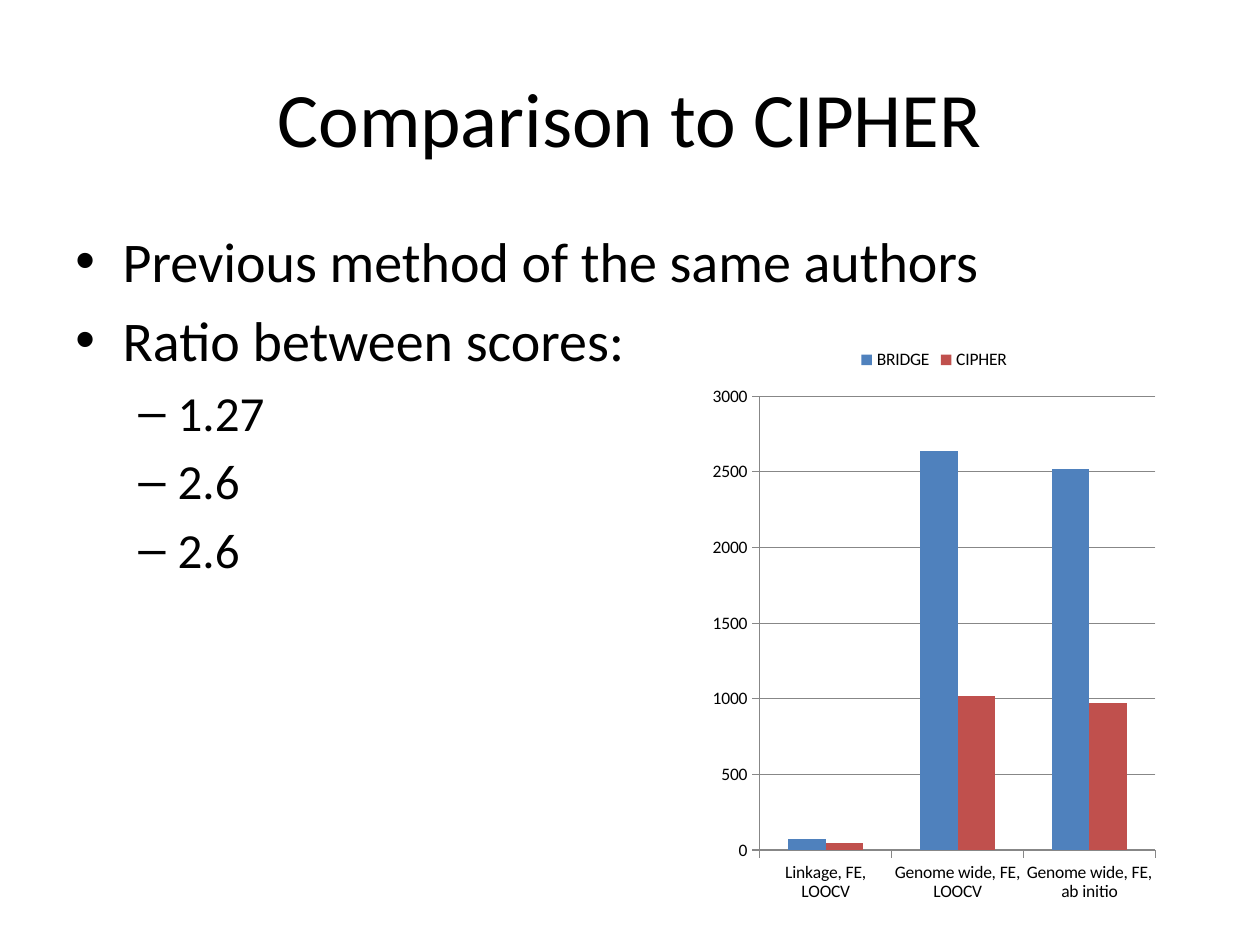
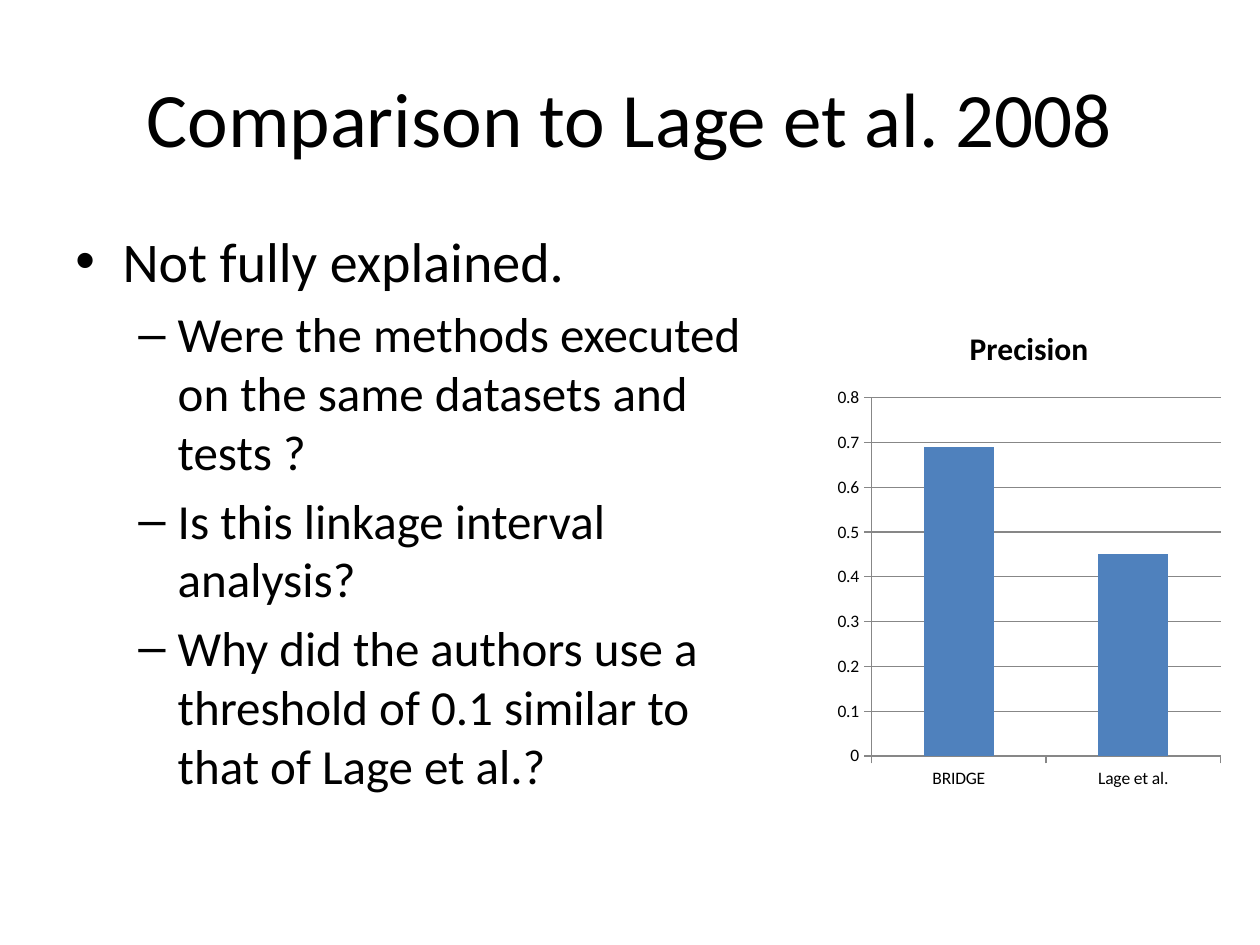
from lxml import etree
from pptx import Presentation
from pptx.chart.data import CategoryChartData
from pptx.dml.color import RGBColor
from pptx.enum.chart import XL_CHART_TYPE, XL_LEGEND_POSITION, XL_TICK_MARK
from pptx.enum.text import MSO_ANCHOR, PP_ALIGN
from pptx.oxml.ns import qn
from pptx.util import Pt

COLUMNS = XL_CHART_TYPE.COLUMN_CLUSTERED
LEGEND_TOP = XL_LEGEND_POSITION.TOP
TICK_OUTSIDE = XL_TICK_MARK.OUTSIDE
MIDDLE, TOP = MSO_ANCHOR.MIDDLE, MSO_ANCHOR.TOP
CENTER, LEFT = PP_ALIGN.CENTER, PP_ALIGN.LEFT

# Content: bullets are (level, text); places are (left, top, width, height) in points
SLIDES = [
    {
        "title": "Comparison to CIPHER",
        "bullets": [
            (0, "Previous method of the same authors"),
            (0, "Ratio between scores:"),
            (1, "1.27"),
            (1, "2.6"),
            (1, "2.6"),
        ],
        "body_place": (36, 126, 648, 330),
        "chart": {
            "place": (402, 192, 263.5, 330),
            "categories": ["Linkage, FE, LOOCV", "Genome wide, FE, LOOCV",
                           "Genome wide, FE, ab initio"],
            "series": {"BRIDGE": [70, 2640, 2520], "CIPHER": [50, 1020, 970]},
            "axis_max": 3000,
            "axis_step": 500,
        },
    },
    {
        "title": "Comparison to Lage et al. 2008",
        "bullets": [
            (0, "Not fully explained."),
            (1, "Were the methods executed on the same datasets and tests ?"),
            (1, "Is this linkage interval analysis?"),
            (1, "Why did the authors use a threshold of 0.1 similar to that of Lage et al.?"),
        ],
        "body_place": (36, 126, 396, 356),
        "chart": {
            "place": (474, 174, 228, 282),
            "title": "Precision",
            "categories": ["BRIDGE", "Lage et al."],
            "series": {"Precision": [0.69, 0.45]},
            "axis_max": 0.8,
            "axis_step": 0.1,
        },
    },
]

# Shared style
FONT = "Calibri"
BLACK, GRID_GRAY = "000000", "878787"
SERIES_COLORS = ["4F81BD", "C0504D"]
TITLE_PLACE = (36, 21.6, 648, 90)
TITLE_SIZE = 44
LEVELS = [  # size, text indent, hanging indent, bullet
    (32, 27, 27, "•"),
    (28, 58.5, 22.5, "–"),
]


def rgb(color):
    return RGBColor.from_string(color)


def points(place):
    return [Pt(length) for length in place]


def style_font(font, size, bold=False):
    font.name, font.size, font.bold = FONT, Pt(size), bold
    font.color.rgb = rgb(BLACK)


def add_text_frame(page, place, anchor):
    frame = page.shapes.add_textbox(*points(place)).text_frame
    frame.word_wrap = True
    frame.vertical_anchor = anchor
    return frame


def write_paragraph(para, text, size, alignment):
    para.text = text
    para.alignment = alignment
    style_font(para.font, size)


def add_title(page, text):
    frame = add_text_frame(page, TITLE_PLACE, MIDDLE)
    write_paragraph(frame.paragraphs[0], text, TITLE_SIZE, CENTER)


def add_bullets(page, bullets, place):
    frame = add_text_frame(page, place, TOP)
    for index, (level, text) in enumerate(bullets):
        para = frame.add_paragraph() if index else frame.paragraphs[0]
        size, indent, hanging, bullet = LEVELS[level]
        write_paragraph(para, text, size, LEFT)
        para.level = level
        para.space_before = Pt(0.2 * size)
        properties = para._p.get_or_add_pPr()
        properties.set("marL", str(Pt(indent)))
        properties.set("indent", str(-Pt(hanging)))
        # Bullet marks come before the default run properties
        marks = [etree.Element(qn("a:buFont"), typeface="Arial"),
                 etree.Element(qn("a:buChar"), char=bullet)]
        default_run = properties.find(qn("a:defRPr"))
        for mark in marks:
            default_run.addprevious(mark)


def style_line(line):
    line.color.rgb = rgb(GRID_GRAY)
    line.width = Pt(0.75)


def add_column_chart(page, content):
    data = CategoryChartData()
    data.categories = content["categories"]
    for name, values in content["series"].items():
        data.add_series(name, values)
    chart = page.shapes.add_chart(COLUMNS, *points(content["place"]), data).chart
    style_font(chart.font, 10)

    # Title and legend
    chart.has_title = "title" in content
    if chart.has_title:
        para = chart.chart_title.text_frame.paragraphs[0]
        para.text = content["title"]
        style_font(para.font, 18, bold=True)
    chart.has_legend = len(content["series"]) > 1
    if chart.has_legend:
        chart.legend.position = LEGEND_TOP
        chart.legend.include_in_layout = False

    # Columns
    plot = chart.plots[0]
    plot.vary_by_categories = False
    plot.gap_width, plot.overlap = 150, 0
    for series, color in zip(plot.series, SERIES_COLORS):
        series.format.fill.solid()
        series.format.fill.fore_color.rgb = rgb(color)

    # Axes
    for axis in (chart.category_axis, chart.value_axis):
        axis.major_tick_mark = TICK_OUTSIDE
        style_line(axis.format.line)
    values = chart.value_axis
    values.minimum_scale, values.maximum_scale = 0, content["axis_max"]
    values.major_unit = content["axis_step"]
    values.has_major_gridlines = True
    style_line(values.major_gridlines.format.line)


def main():
    deck = Presentation()
    deck.slide_width, deck.slide_height = Pt(720), Pt(540)
    for content in SLIDES:
        page = deck.slides.add_slide(deck.slide_layouts[6])
        add_title(page, content["title"])
        add_bullets(page, content["bullets"], content["body_place"])
        add_column_chart(page, content["chart"])
    deck.save("out.pptx")


if __name__ == "__main__":
    main()
